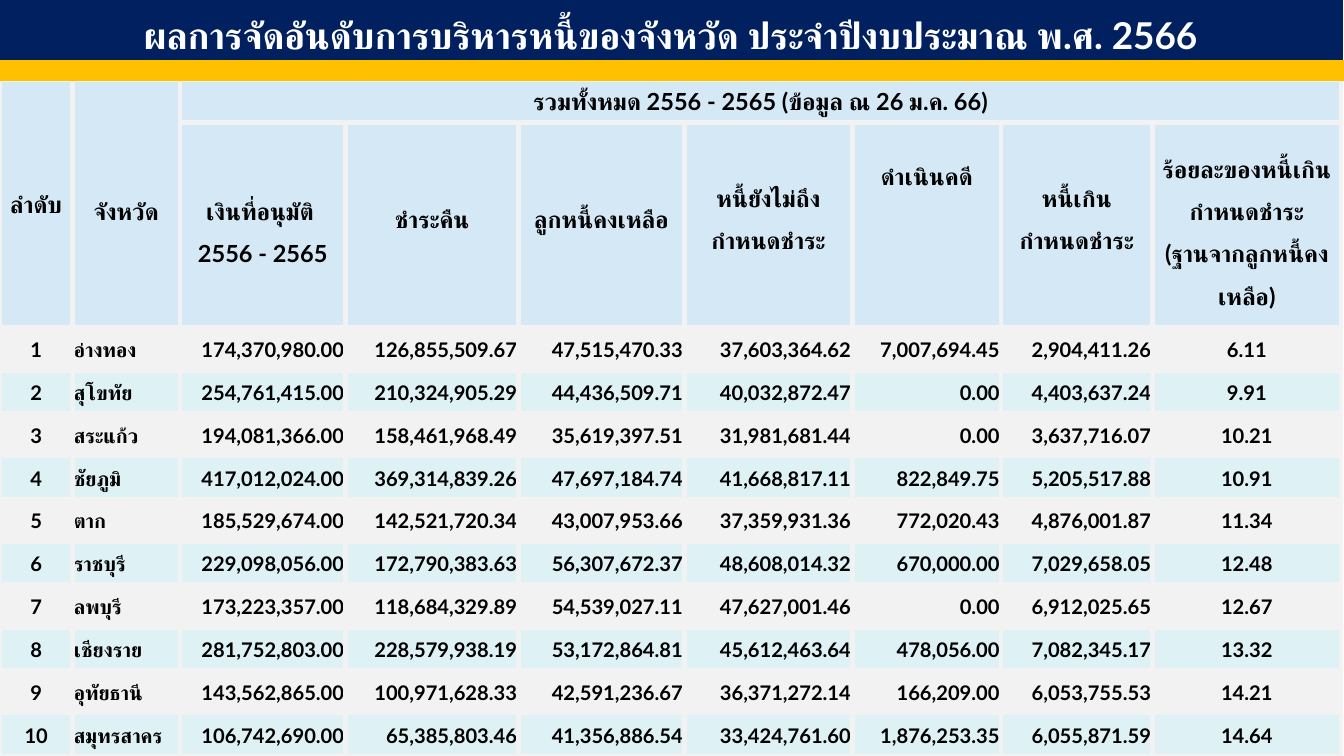
from copy import deepcopy

from lxml.etree import SubElement
from pptx import Presentation
from pptx.dml.color import RGBColor
from pptx.enum.shapes import MSO_SHAPE as Shape
from pptx.enum.text import MSO_ANCHOR as Anchor, MSO_AUTO_SIZE as AutoSize, PP_ALIGN as Align
from pptx.oxml import parse_xml
from pptx.oxml.ns import nsdecls, qn
from pptx.util import Cm, Pt

NAVY, GOLD, WHITE, BLACK = "002060", "FFC000", "FFFFFF", "000000"
CREAM, HEADER_BLUE, BAND_BLUE, GREY = "FEFBF6", "CAE4F6", "D7EFF5", "F2F2F2"

TITLE = "ผลการจัดอันดับการบริหารหนี้ของจังหวัด ประจำปีงบประมาณ พ.ศ. 2566"
PERIOD = "รวมทั้งหมด 2556 - 2565 (ข้อมูล ณ 26 ม.ค. 66)"

# Heading text with its top and bottom inset in cm
SIDE_HEADINGS = [("ลำดับ", 0.03, 0.3), ("จังหวัด", 0.03, 0)]
DEBT_HEADINGS = [
    ("เงินที่อนุมัติ \v2556 - 2565", 0.03, 0),
    ("ชำระคืน", 0.03, 0.55),
    ("ลูกหนี้คงเหลือ", 0.03, 0.55),
    ("หนี้ยังไม่ถึง\vกำหนดชำระ", 0.03, 0.55),
    ("ดำเนินคดี", 0.55, 0),
    ("หนี้เกิน\vกำหนดชำระ", 0.03, 0.55),
    ("ร้อยละของหนี้เกิน\vกำหนดชำระ\v(ฐานจากลูกหนี้คงเหลือ)", 0.03, 0),
]
LAWSUIT = 4

PROVINCES = [
    ("อ่างทอง", "174,370,980.00", "126,855,509.67", "47,515,470.33",
     "37,603,364.62", "7,007,694.45", "2,904,411.26", "6.11"),
    ("สุโขทัย", "254,761,415.00", "210,324,905.29", "44,436,509.71",
     "40,032,872.47", "0.00", "4,403,637.24", "9.91"),
    ("สระแก้ว", "194,081,366.00", "158,461,968.49", "35,619,397.51",
     "31,981,681.44", "0.00", "3,637,716.07", "10.21"),
    ("ชัยภูมิ", "417,012,024.00", "369,314,839.26", "47,697,184.74",
     "41,668,817.11", "822,849.75", "5,205,517.88", "10.91"),
    ("ตาก", "185,529,674.00", "142,521,720.34", "43,007,953.66",
     "37,359,931.36", "772,020.43", "4,876,001.87", "11.34"),
    ("ราชบุรี", "229,098,056.00", "172,790,383.63", "56,307,672.37",
     "48,608,014.32", "670,000.00", "7,029,658.05", "12.48"),
    ("ลพบุรี", "173,223,357.00", "118,684,329.89", "54,539,027.11",
     "47,627,001.46", "0.00", "6,912,025.65", "12.67"),
    ("เชียงราย", "281,752,803.00", "228,579,938.19", "53,172,864.81",
     "45,612,463.64", "478,056.00", "7,082,345.17", "13.32"),
    ("อุทัยธานี", "143,562,865.00", "100,971,628.33", "42,591,236.67",
     "36,371,272.14", "166,209.00", "6,053,755.53", "14.21"),
    ("สมุทรสาคร", "106,742,690.00", "65,385,803.46", "41,356,886.54",
     "33,424,761.60", "1,876,253.35", "6,055,871.59", "14.64"),
]
COLUMN_WIDTHS = [1.52, 2.26, 3.48, 3.63, 3.48, 3.53, 3.12, 3.18, 3.96]
ROW_HEIGHTS = [0.89, 4.31] + [0.9] * len(PROVINCES)
COLUMN_ALIGNS = [Align.CENTER, Align.LEFT] + [Align.RIGHT] * 6 + [Align.CENTER]


def colour(value):
    return RGBColor.from_string(value)


class Page:
    """Holds the font and the current slide."""

    font = "Lato"

    def __init__(self, deck):
        self.slide = deck.slides.add_slide(deck.slide_layouts[5])
        self.paint(self.slide.background.fill, CREAM)

    def paint(self, fill, value, opacity=100):
        fill.solid()
        fill.fore_color.rgb = colour(value)
        if opacity < 100:
            shade = fill._xPr.find(f".//{qn('a:srgbClr')}")
            SubElement(shade, qn("a:alpha"), val=str(opacity * 1000))

    def set_text(self, frame, text, size, value, align, spacing=1.0):
        para = frame.paragraphs[0]
        para.text = text
        para.alignment = align
        para.line_spacing = spacing
        for span in para.runs:
            span.font.name = self.font
            span.font.size = Pt(size)
            span.font.bold = True
            span.font.color.rgb = colour(value)
            # Thai letters take the complex-script font
            SubElement(span.font._rPr, qn("a:cs"), typeface=self.font)
        for line_break in para._p.findall(qn("a:br")):
            line_break.append(deepcopy(para.runs[0].font._rPr))

    def place(self, box, left, top, width, height, value):
        box.left, box.top, box.width, box.height = map(Cm, (left, top, width, height))
        self.paint(box.fill, value)
        box.line.color.rgb = colour(value)
        box.line.width = Pt(1)

    def title(self, text, *frame_and_fill):
        box = self.slide.shapes.title
        self.place(box, *frame_and_fill)
        box.text_frame.word_wrap = True
        box.text_frame.auto_size = AutoSize.NONE
        box.text_frame.vertical_anchor = Anchor.MIDDLE
        self.set_text(box.text_frame, text, 22, WHITE, Align.CENTER, 1.3)

    def bar(self, *frame_and_fill):
        box = self.slide.shapes.add_shape(Shape.RECTANGLE, 0, 0, 0, 0)
        box.shadow.inherit = False
        self.place(box, *frame_and_fill)

    def table(self, left, top, widths, heights):
        table = self.slide.shapes.add_table(
            len(heights), len(widths), Cm(left), Cm(top),
            Cm(sum(widths)), Cm(sum(heights))).table
        table.first_row = table.horz_banding = False
        for column, width in zip(table.columns, widths):
            column.width = Cm(width)
        for row, height in zip(table.rows, heights):
            row.height = Cm(height)
        return table

    def cell(self, cell, text, fill, size=12, align=Align.CENTER, spacing=1.0,
             insets=(0.03, 0), anchor=Anchor.MIDDLE):
        cell.margin_left = cell.margin_right = Cm(0.03)
        cell.margin_top, cell.margin_bottom = map(Cm, insets)
        cell.vertical_anchor = anchor
        self.paint(cell.fill, *fill)
        self.border(cell)
        if text:
            self.set_text(cell.text_frame, text, size, BLACK, align, spacing)

    def border(self, cell):
        properties = cell._tc.get_or_add_tcPr()
        for position, side in enumerate("LRTB"):
            properties.insert(position, parse_xml(
                f'<a:ln{side} {nsdecls("a")} w="{Pt(3)}"><a:solidFill>'
                f'<a:srgbClr val="{GREY}"/></a:solidFill></a:ln{side}>'))


def fill_headings(page, table):
    blue = (HEADER_BLUE, 80)
    for row in range(2):
        for column in range(len(COLUMN_WIDTHS)):
            if row == 0 and column < 2:
                text, *insets = SIDE_HEADINGS[column]
            elif row == 1 and column >= 2:
                text, *insets = DEBT_HEADINGS[column - 2]
            else:
                text, insets = (PERIOD if column == 2 else ""), (0.03, 0)
            spacing = 1.0 if text == PERIOD else 1.5
            top_set = row == 1 and column == LAWSUIT + 2
            page.cell(table.cell(row, column), text, blue, 14, spacing=spacing,
                      insets=insets, anchor=Anchor.TOP if top_set else Anchor.MIDDLE)
    for column in range(2):
        table.cell(0, column).merge(table.cell(1, column))
    table.cell(0, 2).merge(table.cell(0, len(COLUMN_WIDTHS) - 1))


def fill_provinces(page, table):
    for rank, province in enumerate(PROVINCES, 1):
        fill = (BAND_BLUE, 80) if rank % 2 == 0 else (GREY, 100 if rank == 1 else 90)
        for column, text in enumerate((str(rank), *province)):
            page.cell(table.cell(rank + 1, column), text, fill,
                      align=COLUMN_ALIGNS[column])


def main():
    deck = Presentation()
    deck.slide_width, deck.slide_height = Cm(28.22), Cm(15.88)
    page = Page(deck)
    table = page.table(0, 1.68, COLUMN_WIDTHS, ROW_HEIGHTS)
    fill_headings(page, table)
    fill_provinces(page, table)
    page.title(TITLE, -0.03, -0.05, 28.22, 1.3, NAVY)
    page.bar(0, 1.27, 28.22, 0.41, GOLD)
    deck.save("out.pptx")


if __name__ == "__main__":
    main()
